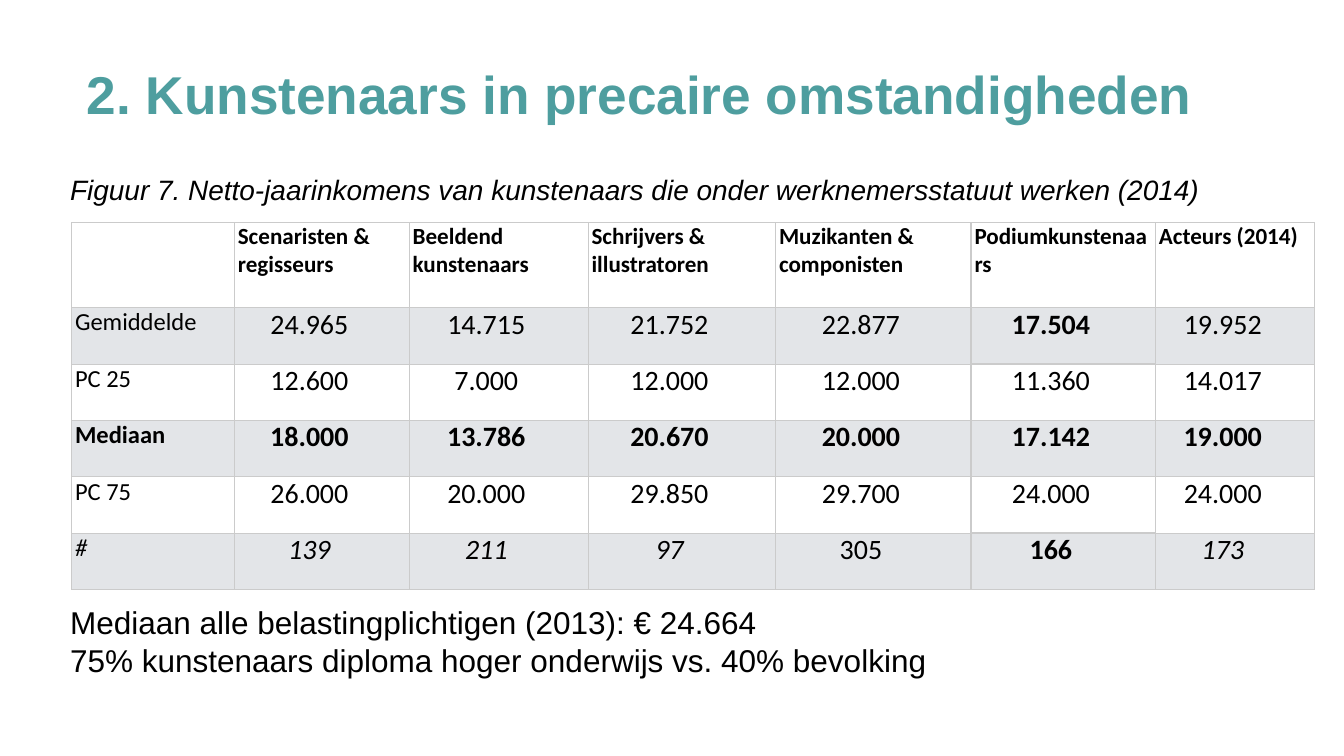
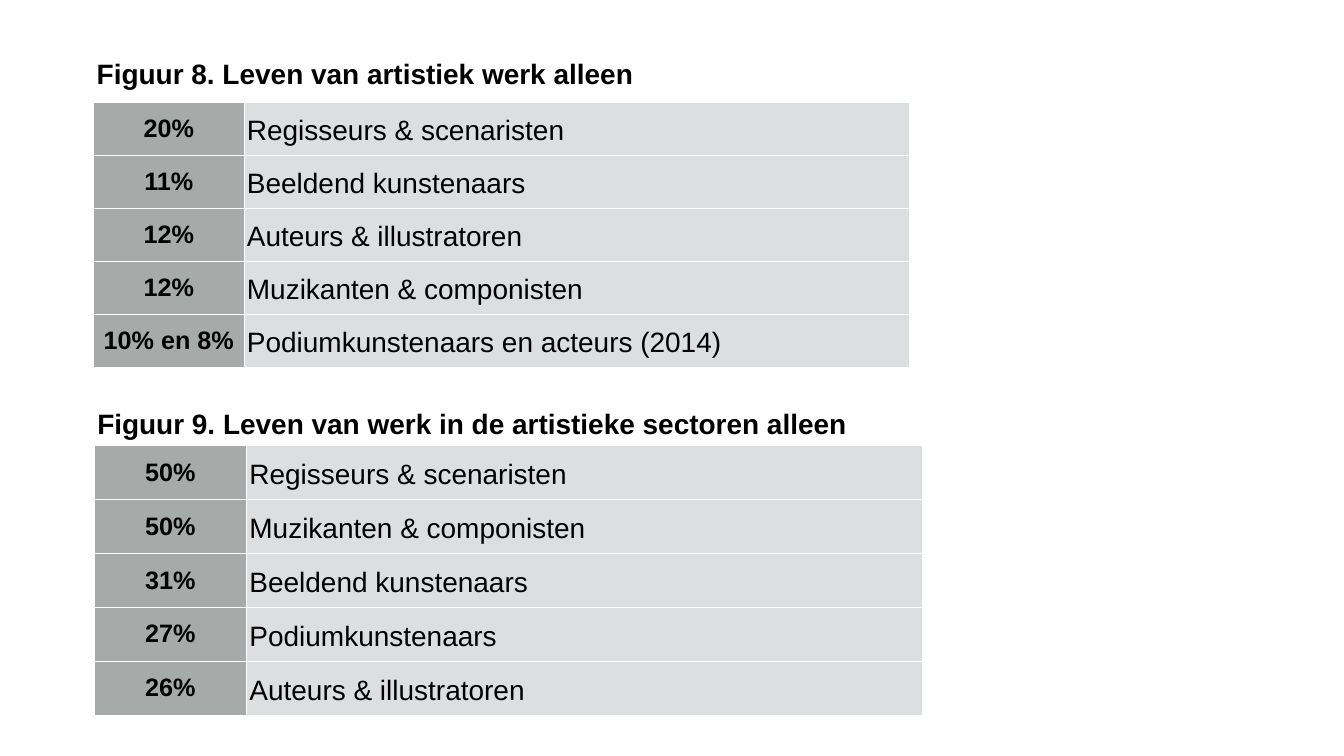
import pptx
import pptx.dml.color
import pptx.enum.text
import pptx.oxml.ns
import pptx.util
from dataclasses import dataclass
from lxml import etree

PX = 9144
ALIGN = pptx.enum.text.PP_ALIGN
ANCHOR = pptx.enum.text.MSO_ANCHOR


@dataclass(frozen=True)
class Theme:
    """Colours, fonts and type sizes of the slides."""
    teal: str = "4E9E9F"
    black: str = "000000"
    white: str = "FFFFFF"
    rule: str = "CBCBCB"
    band: str = "E3E5E8"
    share: str = "A6AAA9"
    group: str = "DCDEE0"
    sans: str = "Arial"
    table: str = "Calibri"
    title: int = 76
    note: int = 45
    body: int = 40
    percent: int = 36
    label: int = 35
    head: int = 33
    thin: float = 1
    thick: float = 2.25


T = Theme()

INCOME_COLS = [323, 347, 355, 372, 388, 366, 316]
INCOME_ROWS = [168] + [112] * 5
INCOME = [
    ["", "Scenaristen & regisseurs", "Beeldend kunstenaars", "Schrijvers & illustratoren",
     "Muzikanten & componisten", "Podiumkunstenaars", "Acteurs (2014)"],
    ["Gemiddelde", "24.965", "14.715", "21.752", "22.877", "17.504", "19.952"],
    ["PC 25", "12.600", "7.000", "12.000", "12.000", "11.360", "14.017"],
    ["Mediaan", "18.000", "13.786", "20.670", "20.000", "17.142", "19.000"],
    ["PC 75", "26.000", "20.000", "29.850", "29.700", "24.000", "24.000"],
    ["#", "139", "211", "97", "305", "166", "173"],
]
STAGE_COL = 5
BOLD_ROWS = (0, 3)
BOLD_CELLS = [(1, STAGE_COL), (5, STAGE_COL)]
COUNT_ROW = 5
UPRIGHT_COUNTS = (4, STAGE_COL)

ARTISTIC_WORK = [
    ("20%", "Regisseurs & scenaristen"),
    ("11%", "Beeldend kunstenaars"),
    ("12%", "Auteurs & illustratoren"),
    ("12%", "Muzikanten & componisten"),
    ("10% en 8%", "Podiumkunstenaars en acteurs (2014)"),
]
ARTISTIC_SECTORS = [
    ("50%", "Regisseurs & scenaristen"),
    ("50%", "Muzikanten & componisten"),
    ("31%", "Beeldend kunstenaars"),
    ("27%", "Podiumkunstenaars"),
    ("26%", "Auteurs & illustratoren"),
]


def rgb(color):
    """Turn a hex string into a colour."""
    return pptx.dml.color.RGBColor.from_string(color)


def write(tf, text, size=T.body, font=T.sans, color=T.black, bold=False, italic=False,
          align=ALIGN.LEFT, spacing=None):
    """Write text into a frame, one paragraph per line."""
    tf.word_wrap = True
    for i, line in enumerate(text.split("\n")):
        p = tf.add_paragraph() if i else tf.paragraphs[0]
        p.alignment = align
        if spacing:
            p.line_spacing = spacing
        r = p.add_run()
        r.text = line
        f = r.font
        f.size, f.name, f.bold, f.italic = pptx.util.Pt(size), font, bold, italic
        f.color.rgb = rgb(color)


def add_text(slide, box, text, **fmt):
    """Add a text box without insets."""
    tf = slide.shapes.add_textbox(*[v * PX for v in box]).text_frame
    tf.margin_left = tf.margin_top = tf.margin_right = tf.margin_bottom = 0
    tf.auto_size = pptx.enum.text.MSO_AUTO_SIZE.SHAPE_TO_FIT_TEXT
    write(tf, text, **fmt)


def add_grid(slide, x, y, cols, rows):
    """Add a plain table with the given column widths and row heights."""
    sp = slide.shapes.add_table(len(rows), len(cols), x * PX, y * PX,
                                sum(cols) * PX, sum(rows) * PX)
    table = sp.table
    table.first_row = table.horz_banding = False
    for col, width in zip(table.columns, cols):
        col.width = width * PX
    for row, height in zip(table.rows, rows):
        row.height = height * PX
    return table


def style_cell(cell, fill, insets, color, heavy=""):
    """Set fill, insets and borders of a cell; heavy names its thick sides."""
    cell.margin_left, cell.margin_top, cell.margin_right, cell.margin_bottom = [
        v * PX for v in insets]
    pr = cell._tc.get_or_add_tcPr()
    for side in "LRTB":
        width = T.thick if side in heavy else T.thin
        ln = etree.SubElement(pr, pptx.oxml.ns.qn("a:ln" + side),
                              w=str(int(pptx.util.Pt(width))))
        solid = etree.SubElement(ln, pptx.oxml.ns.qn("a:solidFill"))
        etree.SubElement(solid, pptx.oxml.ns.qn("a:srgbClr"), val=color)
    if fill:
        cell.fill.solid()
        cell.fill.fore_color.rgb = rgb(fill)
    else:
        cell.fill.background()


def heavy_sides(r, c):
    """Name the thick sides of an income cell."""
    sides = "T" if r == 0 else "B" if r == len(INCOME) - 1 else ""
    return sides + {STAGE_COL - 1: "R", STAGE_COL: "LRTB", STAGE_COL + 1: "L"}.get(c, "")


def income_table(slide, x, y):
    """Add the table of net yearly incomes."""
    table = add_grid(slide, x, y, INCOME_COLS, INCOME_ROWS)
    for r, row in enumerate(INCOME):
        for c, text in enumerate(row):
            cell = table.cell(r, c)
            number = r > 0 and c > 0
            style_cell(cell, T.band if r % 2 else T.white,
                       (7, 0, 56 if number else 7, 0), T.rule, heavy_sides(r, c))
            if text:
                write(cell.text_frame, text, font=T.table,
                      size=T.body if number else T.label if r else T.head,
                      bold=r in BOLD_ROWS or (r, c) in BOLD_CELLS,
                      italic=r == COUNT_ROW and c not in UPRIGHT_COUNTS,
                      align=ALIGN.CENTER if number else ALIGN.LEFT)


def share_table(slide, x, y, cols, heights, title, shares):
    """Add a titled table of percentages per group of artists."""
    head, row_height = heights
    table = add_grid(slide, x, y, cols, [head] + [row_height] * len(shares))
    table.cell(0, 0).merge(table.cell(0, 1))
    for r, row in enumerate([(title, "")] + shares):
        for c, text in enumerate(row):
            cell = table.cell(r, c)
            style_cell(cell, (T.share, T.group)[c] if r else None, (6,) * 4, T.white)
            cell.vertical_anchor = ANCHOR.MIDDLE
            if r and c == 0:
                write(cell.text_frame, text, size=T.percent, bold=True, align=ALIGN.CENTER)
            elif text:
                write(cell.text_frame, text, bold=r == 0, spacing=1.15)


def income_slide(slide):
    """Build the slide on net incomes."""
    add_text(slide, (172, 122, 2339, 128), "2. Kunstenaars in precaire omstandigheden",
             size=T.title, color=T.teal, bold=True)
    add_text(slide, (139, 342, 2339, 67),
             "Figuur 7. Netto-jaarinkomens van kunstenaars die onder werknemersstatuut werken (2014)",
             italic=True)
    income_table(slide, 142, 442)
    add_text(slide, (139, 1197, 2339, 151),
             "Mediaan alle belastingplichtigen (2013): € 24.664\n"
             "75% kunstenaars diploma hoger onderwijs vs. 40% bevolking", size=T.note)


def share_slide(slide):
    """Build the slide on living from artistic work."""
    share_table(slide, 186, 84, (298, 1321), (119, 105),
                "Figuur 8. Leven van artistiek werk alleen", ARTISTIC_WORK)
    share_table(slide, 187, 793, (302, 1341), (91, 107),
                "Figuur 9. Leven van werk in de artistieke sectoren alleen", ARTISTIC_SECTORS)


def main():
    """Build and save the presentation."""
    prs = pptx.Presentation()
    prs.slide_width, prs.slide_height = 2667 * PX, 1500 * PX
    for build in (income_slide, share_slide):
        build(prs.slides.add_slide(prs.slide_layouts[6]))
    prs.save("out.pptx")


if __name__ == "__main__":
    main()
